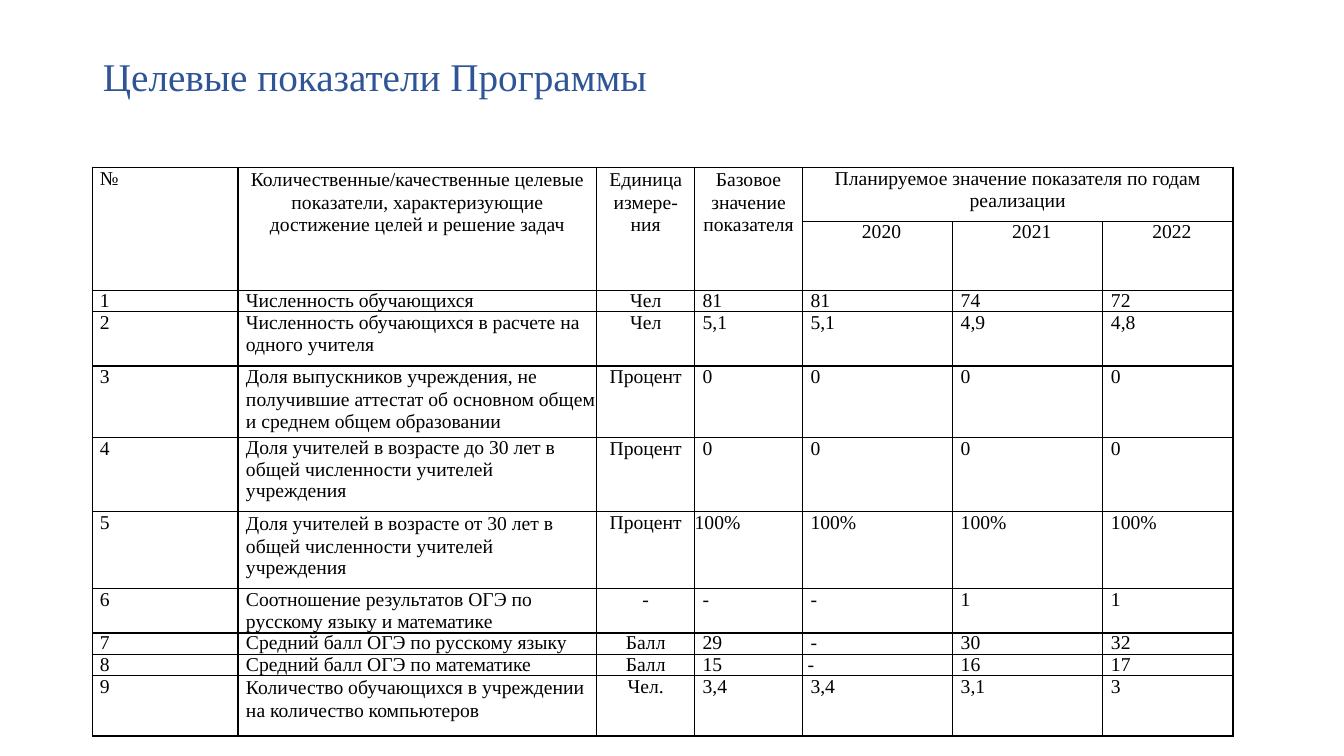
from lxml import etree
from pptx import Presentation
from pptx.dml.color import RGBColor
from pptx.enum.text import MSO_ANCHOR, PP_ALIGN
from pptx.oxml.ns import qn
from pptx.util import Inches, Pt

LEFT, CENTER = PP_ALIGN.LEFT, PP_ALIGN.CENTER
MIDDLE = MSO_ANCHOR.MIDDLE
BLUE = RGBColor(0x2F, 0x55, 0x97)
BLACK = RGBColor(0, 0, 0)
FONT = "Times New Roman"


def write(frame, text, size=14, color=BLACK, align=LEFT, spacing=(15.8,),
          indent=0.0, right=0.0, before=0.0):
    """Write one paragraph per line; spacing above 3 is in points."""
    for number, line in enumerate(text.split("\n")):
        para = frame.paragraphs[0] if number == 0 else frame.add_paragraph()
        para.alignment = align
        step = spacing[min(number, len(spacing) - 1)]
        para.line_spacing = Pt(step) if step > 3 else step
        para.space_before = Pt(before)
        margins = para._p.get_or_add_pPr()
        margins.set("marL", str(Inches(indent)))
        margins.set("marR", str(Inches(right)))
        margins.set("indent", "0")
        span = para.add_run()
        span.text = line
        span.font.name = FONT
        span.font.size = Pt(size)
        span.font.color.rgb = color


def plain_cell(cell):
    """Remove insets and fill, and draw a thin black border."""
    cell.margin_left = cell.margin_right = 0
    cell.margin_top = cell.margin_bottom = 0
    props = cell._tc.get_or_add_tcPr()
    for side in ("a:lnL", "a:lnR", "a:lnT", "a:lnB"):
        border = etree.SubElement(props, qn(side), w=str(Pt(1)))
        paint = etree.SubElement(border, qn("a:solidFill"))
        etree.SubElement(paint, qn("a:srgbClr"), val=str(BLACK))
    cell.fill.background()


deck = Presentation()
deck.slide_width, deck.slide_height = Inches(13.33), Inches(7.5)
page = deck.slides.add_slide(deck.slide_layouts[5])

# Title
title = page.shapes.title
title.left, title.top = Inches(0.92), Inches(0.4)
title.width, title.height = Inches(11.5), Inches(0.77)
title.text_frame.vertical_anchor = MIDDLE
title.text_frame.word_wrap = True
write(title.text_frame, "Целевые показатели Программы", size=28, color=BLUE,
      spacing=(0.9,))

# Table grid
COLUMNS = [1.44, 3.56, 0.97, 1.07, 1.49, 1.49, 1.29]
ROWS = [0.54, 0.68, 0.21, 0.54, 0.71, 0.73, 0.77, 0.44, 0.21, 0.21, 0.6]
table = page.shapes.add_table(
    len(ROWS), len(COLUMNS), Inches(0.92), Inches(1.66),
    Inches(sum(COLUMNS)), Inches(sum(ROWS))).table
table.first_row = table.horz_banding = False
for column, width in zip(table.columns, COLUMNS):
    column.width = Inches(width)
for row, height in zip(table.rows, ROWS):
    row.height = Inches(height)
for cell in table.iter_cells():
    plain_cell(cell)

# Header: four tall cells, then the plan years
for col in range(4):
    table.cell(0, col).merge(table.cell(1, col))
table.cell(0, 4).merge(table.cell(0, 6))
write(table.cell(0, 0).text_frame, "№", indent=0.07)
HEADERS = [
    (1, "Количественные/качественные целевые показатели, характеризующие\n"
        "достижение целей и решение задач", 0.11, (1.07, 15.9)),
    (2, "Единица измере-\nния", 0.12, (1.07, 15.9)),
    (3, "Базовое значение\nпоказателя", 0.06, (1.07, 15.9)),
    (4, "Планируемое значение показателя по годам\nреализации", 0.25,
     (15.8, 15.6)),
]
for col, text, side, spacing in HEADERS:
    write(table.cell(0, col).text_frame, text, align=CENTER, indent=side,
          right=side, spacing=spacing)
for col, year in enumerate(("2020", "2021", "2022"), start=4):
    write(table.cell(1, col).text_frame, year, align=CENTER, indent=0.08,
          spacing=(15.1,))

# Indicators: name, spacing of the name, spacing of the row, unit, values
INDICATORS = [
    ("Численность обучающихся", (15.1,), 15.1, "Чел",
     ["81", "81", "74", "72"]),
    ("Численность обучающихся в расчете на\nодного учителя", (15.8, 15.6),
     15.8, "Чел", ["5,1", "5,1", "4,9", "4,8"]),
    ("Доля выпускников учреждения, не\nполучившие аттестат об основном "
     "общем и среднем общем образовании", (15.8, 16.1), 15.8, "Процент",
     ["0"] * 4),
    ("Доля учителей в возрасте до 30 лет в общей численности учителей\n"
     "учреждения", (1.0, 15.2), 15.8, "Процент", ["0"] * 4),
    ("Доля учителей в возрасте от 30 лет в общей численности учителей\n"
     "учреждения", (1.07, 15.4), 15.8, "Процент", ["100%"] * 4),
    ("Соотношение результатов ОГЭ по\nрусскому языку и математике",
     (15.8, 15.4), 15.8, "-", ["-", "-", "1", "1"]),
    ("Средний балл ОГЭ по русскому языку", (15.1,), 15.1, "Балл",
     ["29", "-", "30", "32"]),
    ("Средний балл ОГЭ по математике", (15.2,), 15.2, "Балл",
     ["15", "-", "16", "17"]),
    ("Количество обучающихся в учреждении на количество компьютеров",
     (1.07,), 15.8, "Чел.", ["3,4", "3,4", "3,1", "3"]),
]
# Values set closer to the border: (indicator, column)
SPECIAL_INDENTS = {(5, 3): 0.0, (8, 4): 0.05}
for number, (name, name_spacing, step, unit, values) in enumerate(
        INDICATORS, start=1):
    row = number + 1
    write(table.cell(row, 0).text_frame, str(number), indent=0.07,
          spacing=(step,))
    write(table.cell(row, 1).text_frame, name, indent=0.08,
          spacing=name_spacing)
    write(table.cell(row, 2).text_frame, unit, align=CENTER, indent=0.11,
          right=0.11, spacing=(step,))
    for col, value in enumerate(values, start=3):
        write(table.cell(row, col).text_frame, value, spacing=(step,),
              indent=SPECIAL_INDENTS.get((number, col), 0.08))

deck.save("out.pptx")
